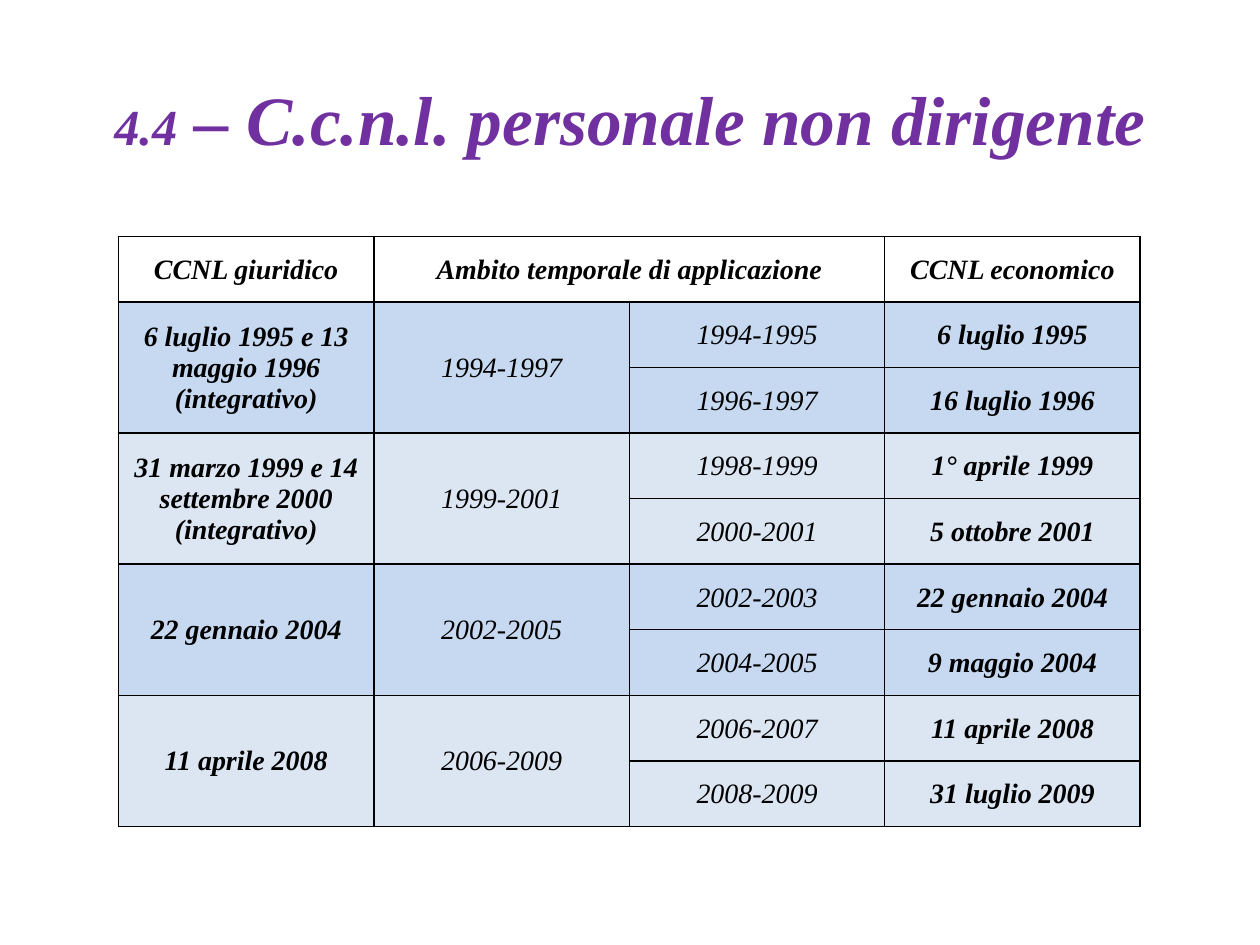
from dataclasses import dataclass

from lxml import etree
from pptx import Presentation
from pptx.dml.color import RGBColor
from pptx.enum.text import MSO_ANCHOR, PP_ALIGN
from pptx.oxml.ns import qn
from pptx.util import Inches, Pt

CENTER = PP_ALIGN.CENTER
MIDDLE = MSO_ANCHOR.MIDDLE


@dataclass(frozen=True)
class Theme:
    font: str = "Times New Roman"
    title_color: str = "7030A0"
    text_color: str = "000000"
    border_color: str = "000000"
    bands: tuple = ("C6D9F1", "DCE6F2")
    number_size: float = 28.8
    title_size: float = 39.6
    table_size: float = 16
    border_width: float = 1


THEME = Theme()
SLIDE_WIDTH, SLIDE_HEIGHT = 10, 7.5
TITLE_BOX = (0.05, 0.04, 0.9, 0.17)
TABLE_BOX = (0.094, 0.25, 0.811, 0.625)
COLUMNS = 4
ROWS_PER_CONTRACT = 2

TITLE_RUNS = (
    ("4.4", THEME.number_size),
    (" – C.c.n.l. personale non dirigente", THEME.title_size),
)
HEADERS = (
    (0, "CCNL giuridico"),
    (1, "Ambito temporale di applicazione"),
    (3, "CCNL economico"),
)
CONTRACTS = (
    ("6 luglio 1995 e 13 maggio 1996 (integrativo)", "1994-1997",
     (("1994-1995", "6 luglio 1995"), ("1996-1997", "16 luglio 1996"))),
    ("31 marzo 1999 e 14 settembre 2000 (integrativo)", "1999-2001",
     (("1998-1999", "1° aprile 1999"), ("2000-2001", "5 ottobre 2001"))),
    ("22 gennaio 2004", "2002-2005",
     (("2002-2003", "22 gennaio 2004"), ("2004-2005", "9 maggio 2004"))),
    ("11 aprile 2008", "2006-2009",
     (("2006-2007", "11 aprile 2008"), ("2008-2009", "31 luglio 2009"))),
)


def box_lengths(box):
    left, top, width, height = box
    return (Inches(left * SLIDE_WIDTH), Inches(top * SLIDE_HEIGHT),
            Inches(width * SLIDE_WIDTH), Inches(height * SLIDE_HEIGHT))


def format_run(run, size, color, bold=True):
    run.font.name = THEME.font
    run.font.size = Pt(size)
    run.font.bold = bold
    run.font.italic = True
    run.font.color.rgb = RGBColor.from_string(color)


def add_title(slide, box):
    text_frame = slide.shapes.add_textbox(*box_lengths(box)).text_frame
    text_frame.word_wrap = True
    text_frame.vertical_anchor = MIDDLE
    paragraph = text_frame.paragraphs[0]
    paragraph.alignment = CENTER
    for text, size in TITLE_RUNS:
        run = paragraph.add_run()
        run.text = text
        format_run(run, size, THEME.title_color)


def add_borders(cell):
    properties = cell._tc.get_or_add_tcPr()
    for side in ("a:lnL", "a:lnR", "a:lnT", "a:lnB"):
        line = etree.SubElement(properties, qn(side), w=str(Pt(THEME.border_width)))
        fill = etree.SubElement(line, qn("a:solidFill"))
        etree.SubElement(fill, qn("a:srgbClr"), val=THEME.border_color)


def style_cell(cell, band):
    add_borders(cell)
    if band is None:
        cell.fill.background()
    else:
        cell.fill.solid()
        cell.fill.fore_color.rgb = RGBColor.from_string(band)
    cell.vertical_anchor = MIDDLE
    cell.margin_left = cell.margin_right = cell.margin_top = Inches(0.01)
    cell.margin_bottom = 0


def write_cell(cell, text, bold=True):
    cell.text_frame.text = text
    paragraph = cell.text_frame.paragraphs[0]
    paragraph.alignment = CENTER
    format_run(paragraph.runs[0], THEME.table_size, THEME.text_color, bold)


def add_contract_table(slide, box):
    row_count = 1 + ROWS_PER_CONTRACT * len(CONTRACTS)
    left, top, width, height = box_lengths(box)
    table = slide.shapes.add_table(row_count, COLUMNS, left, top, width, height).table
    table.first_row = False
    table.horz_banding = False
    for column in table.columns:
        column.width = width // COLUMNS
    for index, row in enumerate(table.rows):
        row.height = height // row_count
        contract_index = (index - 1) // ROWS_PER_CONTRACT
        band = THEME.bands[contract_index % len(THEME.bands)] if index else None
        for cell in row.cells:
            style_cell(cell, band)

    table.cell(0, 1).merge(table.cell(0, 2))
    for column, text in HEADERS:
        write_cell(table.cell(0, column), text)

    for index, (legal, period, economic) in enumerate(CONTRACTS):
        first = 1 + index * ROWS_PER_CONTRACT
        for column, text in enumerate((legal, period)):
            cell = table.cell(first, column)
            cell.merge(table.cell(first + ROWS_PER_CONTRACT - 1, column))
            write_cell(cell, text, bold=column == 0)
        for row, (years, date) in enumerate(economic, first):
            write_cell(table.cell(row, 2), years, bold=False)
            write_cell(table.cell(row, 3), date)


def main():
    presentation = Presentation()
    presentation.slide_width = Inches(SLIDE_WIDTH)
    presentation.slide_height = Inches(SLIDE_HEIGHT)
    slide = presentation.slides.add_slide(presentation.slide_layouts[6])
    add_title(slide, TITLE_BOX)
    add_contract_table(slide, TABLE_BOX)
    presentation.save("out.pptx")


if __name__ == "__main__":
    main()
